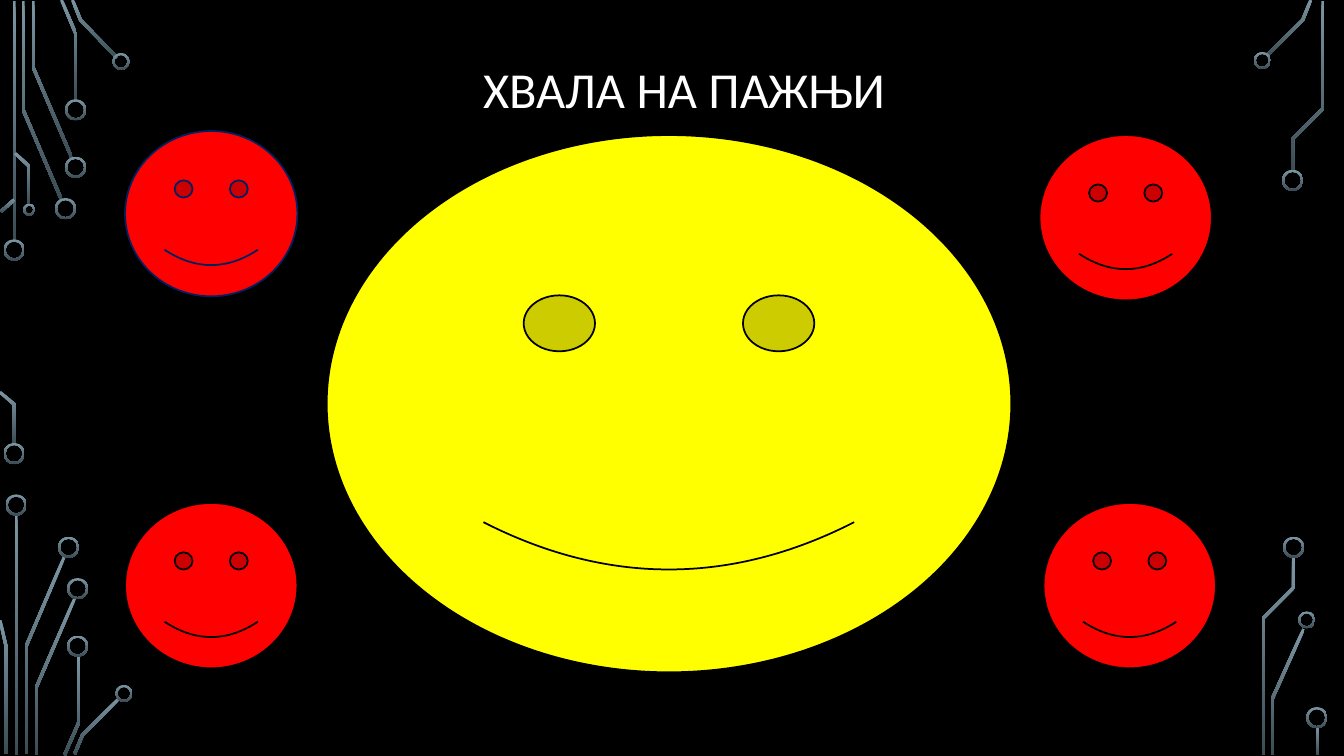
import math
from pptx import Presentation
from pptx.dml.color import RGBColor
from pptx.enum import shapes, text
from pptx.util import Inches, Pt

BLACK = RGBColor(0x00, 0x00, 0x00)
WHITE = RGBColor(0xFF, 0xFF, 0xFF)
YELLOW = RGBColor(0xFF, 0xFF, 0x00)
RED = RGBColor(0xFF, 0x00, 0x00)
NAVY = RGBColor(0x00, 0x20, 0x60)
STEEL = RGBColor(0x7C, 0x96, 0xA3)
SLATE = RGBColor(0x3B, 0x4C, 0x54)

TITLE = "ХВАЛА НА ПАЖЊИ"

FACES = [
    (3.24, 1.34, 6.79, 5.33, YELLOW, BLACK, 0.044),
    (1.24, 1.3, 1.71, 1.64, RED, NAVY, 0.0465),
    (1.24, 4.99, 1.71, 1.64, RED, BLACK, 0.0465),
    (10.31, 1.34, 1.71, 1.64, RED, BLACK, 0.0465),
    (10.35, 4.99, 1.71, 1.64, RED, BLACK, 0.0465),
]

TRACE_WIDTH = 0.03
TRACES = [
    [(0.14, 0.01), (0.14, 2.4)],
    [(0.23, 0.01), (0.23, 1.09), (0.61, 1.98)],
    [(0.33, 0.01), (0.33, 0.67), (0.71, 1.56)],
    [(0.61, 0), (0.75, 0.33), (0.75, 1)],
    [(0.72, 0), (0.8, 0.2), (1.16, 0.57)],
    [(0.14, 1.98), (0.01, 2.1)],
    [(0, 3.89), (0.14, 4.01), (0.14, 4.41)],
    [(0.15, 1.52), (0.29, 1.65), (0.29, 2.03)],
    [(0.16, 5.1), (0.16, 7.49)],
    [(0.26, 7.48), (0.26, 6.41), (0.64, 5.52)],
    [(0, 6.15), (0.06, 6.41), (0.06, 7.48)],
    [(0.36, 7.49), (0.36, 6.82), (0.74, 5.94)],
    [(0.64, 7.49), (0.78, 7.17), (0.78, 6.5)],
    [(0.74, 7.48), (0.82, 7.29), (1.18, 6.93)],
    [(12.57, 0.55), (12.92, 0.2), (13, 0)],
    [(12.82, 1.69), (12.82, 1.38), (13.12, 1.08), (13.12, 0.01)],
    [(12.62, 7.49), (12.62, 6.93), (12.93, 6.24)],
    [(12.53, 7.49), (12.53, 6.13), (12.83, 5.83), (12.83, 5.52)],
    [(13.07, 7.21), (13.07, 7.49)],
]

RING_WIDTH = 0.02
RINGS = {
    0.21: [(0.14, 2.48), (0.14, 4.5), (0.65, 2.07), (0.75, 1.66), (0.75, 1.09),
           (0.16, 5.01), (0.68, 5.43), (0.77, 5.84), (0.77, 6.41),
           (12.82, 1.79), (12.83, 5.43), (13.06, 7.12)],
    0.17: [(1.2, 0.61), (1.23, 6.88), (12.52, 0.6), (12.96, 6.15)],
    0.12: [(0.29, 2.08)],
}


def trace_outline(points):
    normals = []
    for (x1, y1), (x2, y2) in zip(points, points[1:]):
        length = math.hypot(x2 - x1, y2 - y1)
        normals.append(((y1 - y2) / length, (x2 - x1) / length))
    left, right = [], []
    for (x, y), (ax, ay), (bx, by) in zip(points, normals[:1] + normals, normals + normals[-1:]):
        reach = TRACE_WIDTH / 2 / (1 + ax * bx + ay * by)
        dx, dy = (ax + bx) * reach, (ay + by) * reach
        left.append((Inches(x + dx), Inches(y + dy)))
        right.append((Inches(x - dx), Inches(y - dy)))
    return left + right[::-1]


def paint_circuit(shape):
    shape.shadow.inherit = False
    shape.line.fill.background()
    shape.fill.gradient()
    shape.fill.gradient_angle = 270
    for stop, color in zip(shape.fill.gradient_stops, (STEEL, SLATE)):
        stop.color.rgb = color
    shape.fill.gradient_stops[0].position = 0
    shape.fill.gradient_stops[1].position = 1


def add_circuit(page):
    for points in TRACES:
        outline = trace_outline(points)
        builder = page.shapes.build_freeform(*outline[0])
        builder.add_line_segments(outline[1:], close=True)
        paint_circuit(builder.convert_to_shape())
    for size, centers in RINGS.items():
        for x, y in centers:
            ring = page.shapes.add_shape(
                shapes.MSO_SHAPE.DONUT, Inches(x - size / 2), Inches(y - size / 2),
                Inches(size), Inches(size))
            ring.adjustments[0] = RING_WIDTH / size
            paint_circuit(ring)


def add_title(page):
    title = page.shapes.title
    title.left, title.top = Inches(1.37), Inches(0.1)
    title.width, title.height = Inches(10.83), Inches(1.62)
    frame = title.text_frame
    frame.word_wrap = True
    frame.auto_size = text.MSO_AUTO_SIZE.NONE
    frame.vertical_anchor = text.MSO_ANCHOR.MIDDLE
    para = frame.paragraphs[0]
    para.alignment = text.PP_ALIGN.CENTER
    para.line_spacing = 0.9
    span = para.add_run()
    span.text = TITLE
    span.font.name = "Calibri"
    span.font.size = Pt(36)
    span.font.color.rgb = WHITE


def add_faces(page):
    for x, y, width, height, fill, line, smile in FACES:
        face = page.shapes.add_shape(
            shapes.MSO_SHAPE.SMILEY_FACE, Inches(x), Inches(y), Inches(width), Inches(height))
        face.shadow.inherit = False
        face.adjustments[0] = smile
        face.fill.solid()
        face.fill.fore_color.rgb = fill
        face.line.color.rgb = line
        face.line.width = Pt(1.25)


def main():
    deck = Presentation()
    deck.slide_width, deck.slide_height = Inches(13.33), Inches(7.5)
    page = deck.slides.add_slide(deck.slide_layouts[5])
    page.background.fill.solid()
    page.background.fill.fore_color.rgb = BLACK
    add_circuit(page)
    add_title(page)
    add_faces(page)
    deck.save("out.pptx")


if __name__ == "__main__":
    main()
